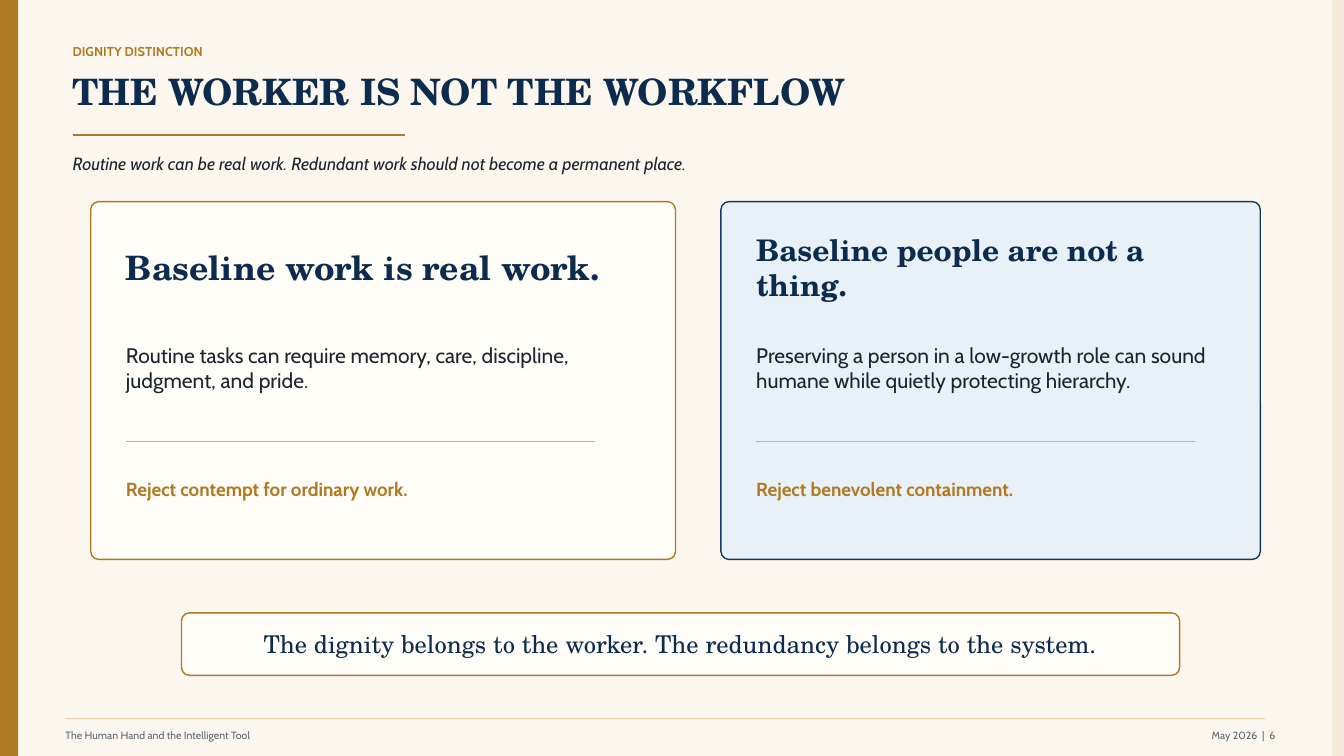
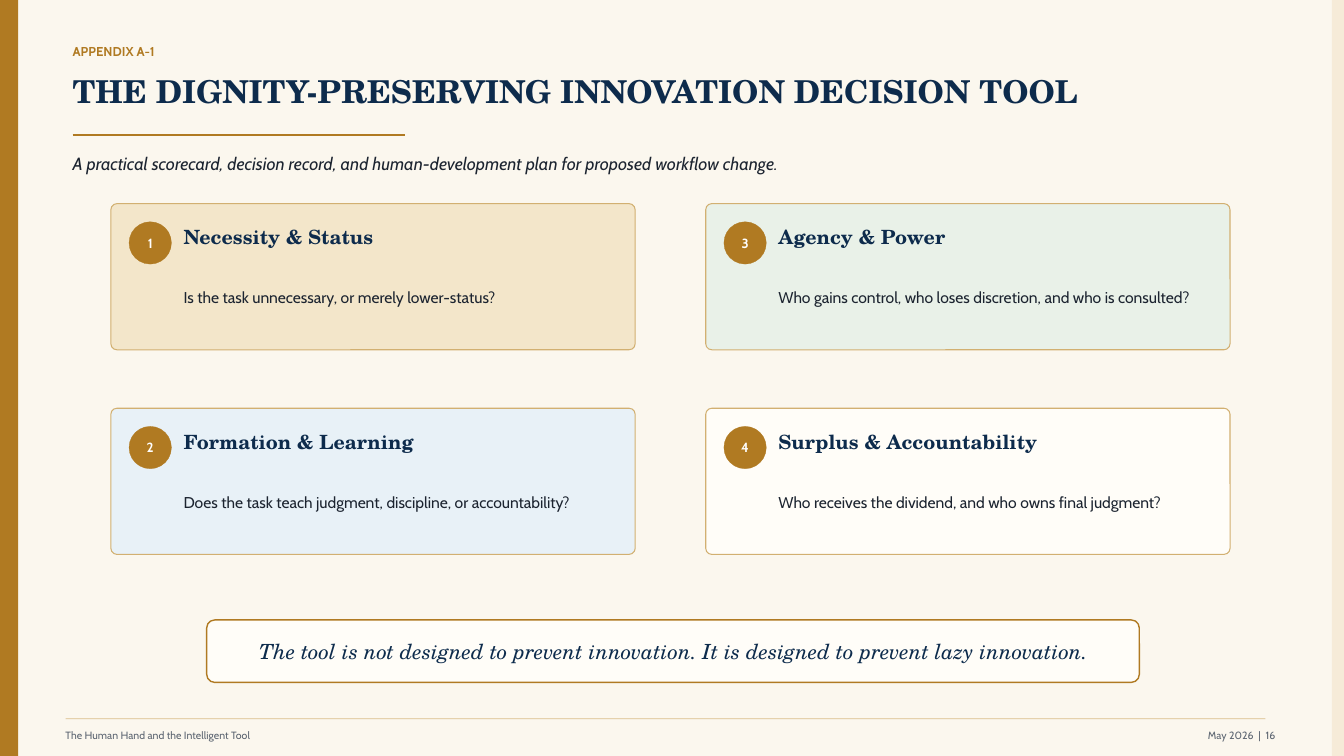
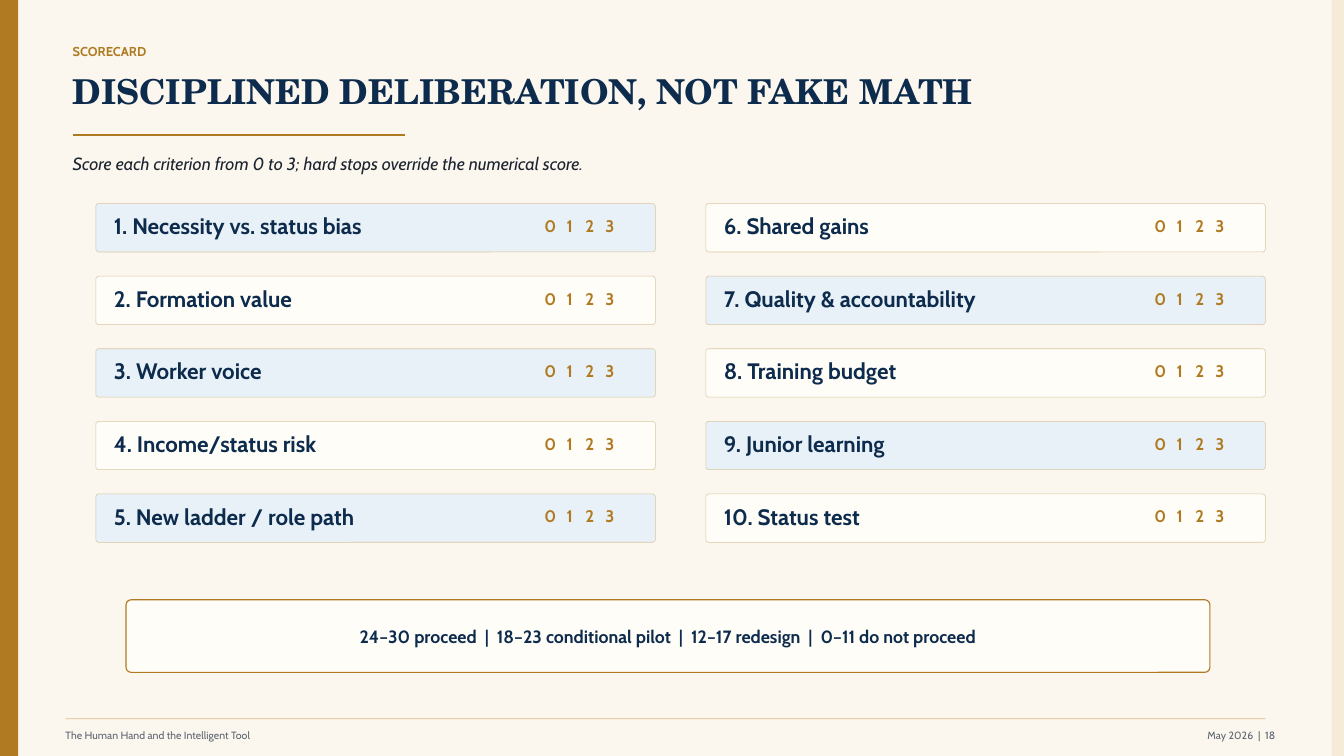
"""Build three slides on dignity, innovation and scoring workflow change."""
from lxml import etree
from pptx import Presentation
from pptx.dml.color import RGBColor
from pptx.enum.shapes import MSO_CONNECTOR, MSO_SHAPE
from pptx.enum.text import MSO_ANCHOR, PP_ALIGN
from pptx.oxml.ns import qn
from pptx.util import Pt

PX = 9144
WIDTH, HEIGHT = 1333, 750
RECT, ROUNDED, OVAL = MSO_SHAPE.RECTANGLE, MSO_SHAPE.ROUNDED_RECTANGLE, MSO_SHAPE.OVAL
STRAIGHT, MIDDLE = MSO_CONNECTOR.STRAIGHT, MSO_ANCHOR.MIDDLE
LEFT, CENTER, RIGHT = PP_ALIGN.LEFT, PP_ALIGN.CENTER, PP_ALIGN.RIGHT
SANS, SERIF = "Cabin", "TeX Gyre Schola"

COLORS = {
    "paper": "FBF7EE", "edge": "F6EBD8", "gold": "B07A22", "soft_gold": "D2B071",
    "row_line": "D8C6A0", "navy": "0D2B4C", "navy_line": "163A5C", "ink": "1C2430",
    "gray": "5B6470", "ivory": "FFFDF8", "blue": "E8F1F7", "sand": "F3E6CA",
    "green": "E9F1E8", "white": "FFFFFF",
}

FOOTER, DATE = "The Human Hand and the Intelligent Tool", "May 2026"

WORKER = {
    "page": 6, "kicker": "DIGNITY DISTINCTION", "title_size": 26,
    "title": "THE WORKER IS NOT THE WORKFLOW",
    "subtitle": "Routine work can be real work. Redundant work should not become a permanent place.",
}
PANELS = [
    {"x": 90, "w": 580, "rule": 465, "fill": "ivory", "line": "gold",
     "heading": "Baseline work is real work.", "size": 24,
     "body": "Routine tasks can require memory, care, discipline, judgment, and pride.",
     "reject": "Reject contempt for ordinary work."},
    {"x": 715, "w": 535, "rule": 435, "fill": "blue", "line": "navy_line",
     "heading": "Baseline people are not a thing.", "size": 21.3,
     "body": "Preserving a person in a low-growth role can sound humane while quietly protecting hierarchy.",
     "reject": "Reject benevolent containment."},
]
DIGNITY = "The dignity belongs to the worker. The redundancy belongs to the system."

TOOL = {
    "page": 16, "kicker": "APPENDIX A-1", "title_size": 22.5,
    "title": "THE DIGNITY-PRESERVING INNOVATION DECISION TOOL",
    "subtitle": "A practical scorecard, decision record, and human-development plan for proposed workflow change.",
}
QUESTIONS = [
    ("Necessity & Status", "Is the task unnecessary, or merely lower-status?", "sand"),
    ("Formation & Learning", "Does the task teach judgment, discipline, or accountability?", "blue"),
    ("Agency & Power", "Who gains control, who loses discretion, and who is consulted?", "green"),
    ("Surplus & Accountability", "Who receives the dividend, and who owns final judgment?", "ivory"),
]
PURPOSE = "The tool is not designed to prevent innovation. It is designed to prevent lazy innovation."

SCORECARD = {
    "page": 18, "kicker": "SCORECARD", "title_size": 24.5,
    "title": "DISCIPLINED DELIBERATION, NOT FAKE MATH",
    "subtitle": "Score each criterion from 0 to 3; hard stops override the numerical score.",
}
CRITERIA = [
    "Necessity vs. status bias", "Formation value", "Worker voice", "Income/status risk",
    "New ladder / role path", "Shared gains", "Quality & accountability",
    "Training budget", "Junior learning", "Status test",
]
SCORES = ["0", "1", "2", "3"]
SCORE_PITCH = 20
VERDICTS = ["24–30 proceed", "18–23 conditional pilot", "12–17 redesign", "0–11 do not proceed"]


def rgb(name):
    return RGBColor.from_string(COLORS[name])


def scaled(*lengths):
    return [length * PX for length in lengths]


def write(shape, text, size, color, face=SANS, bold=False, italic=False,
          align=LEFT, insets=(0, 0, 0, 0), tabs=()):
    frame = shape.text_frame
    frame.word_wrap = True
    frame.vertical_anchor = MIDDLE
    (frame.margin_left, frame.margin_top,
     frame.margin_right, frame.margin_bottom) = scaled(*insets)
    paragraph = frame.paragraphs[0]
    paragraph.text = text
    paragraph.alignment = align
    if tabs:
        stops = etree.SubElement(paragraph._p.get_or_add_pPr(), qn("a:tabLst"))
        for stop in tabs:
            etree.SubElement(stops, qn("a:tab"), pos=str(stop * PX), algn="ctr")
    font = paragraph.font
    font.name, font.size, font.bold, font.italic = face, Pt(size), bold, italic
    font.color.rgb = rgb(color)


def add_text(slide, box, text, size, color, **style):
    write(slide.shapes.add_textbox(*scaled(*box)), text, size, color, **style)


def add_block(slide, kind, box, fill, line=None, weight=1, radius=0):
    block = slide.shapes.add_shape(kind, *scaled(*box))
    block.shadow.inherit = False
    block.fill.solid()
    block.fill.fore_color.rgb = rgb(fill)
    if line:
        block.line.color.rgb = rgb(line)
        block.line.width = Pt(weight)
    else:
        block.line.fill.background()
    if radius:
        block.adjustments[0] = radius / min(box[2:])
    return block


def add_rule(slide, x, y, length, color, weight, opacity=100):
    rule = slide.shapes.add_connector(STRAIGHT, *scaled(x, y, x + length, y))
    rule.line.color.rgb = rgb(color)
    rule.line.width = Pt(weight)
    properties = rule._element.spPr
    if opacity < 100:
        shade = properties.find(".//" + qn("a:srgbClr"))
        etree.SubElement(shade, qn("a:alpha"), val=str(opacity * 1000))
    etree.SubElement(properties, qn("a:effectLst"))


def add_banner(slide, box, text, size, weight=1, radius=8, **style):
    banner = add_block(slide, ROUNDED, box, "ivory", "gold", weight, radius)
    write(banner, text, size, "navy", align=CENTER, **style)


def start_slide(deck, page, kicker, title, title_size, subtitle):
    slide = deck.slides.add_slide(deck.slide_layouts[6])
    add_block(slide, RECT, (0, 0, 18, HEIGHT), "gold")
    add_block(slide, RECT, (WIDTH - 12, 0, 12, HEIGHT), "edge")
    add_text(slide, (72, 40, 350, 22), kicker, 9.2, "gold", bold=True)
    add_text(slide, (72, 65, 1190, 50), title, title_size, "navy", face=SERIF, bold=True)
    add_rule(slide, 72, 134, 330, "gold", 1.15)
    add_text(slide, (72, 147, 1140, 30), subtitle, 12.6, "ink", italic=True)
    add_rule(slide, 65, 713, 1190, "soft_gold", 0.6, opacity=80)
    add_text(slide, (65, 718, 550, 22), FOOTER, 7.5, "gray")
    add_text(slide, (1075, 718, 190, 22), f"{DATE}  |  {page}", 7.5, "gray", align=RIGHT)
    return slide


def build_worker(deck):
    slide = start_slide(deck, **WORKER)
    for panel in PANELS:
        x, w = panel["x"] + 35, panel["w"] - 80
        add_block(slide, ROUNDED, (panel["x"], 200, panel["w"], 355),
                  panel["fill"], panel["line"], radius=8)
        add_text(slide, (x, 238, w, 54), panel["heading"], panel["size"], "navy",
                 face=SERIF, bold=True)
        add_text(slide, (x, 325, w, 80), panel["body"], 15, "ink")
        add_rule(slide, x, 438, panel["rule"], "soft_gold", 1)
        add_text(slide, (x, 468, w, 35), panel["reject"], 13.5, "gold", bold=True)
    add_banner(slide, (180, 608, 990, 62), DIGNITY, 17.5, face=SERIF)


def build_tool(deck):
    slide = start_slide(deck, **TOOL)
    for index, (heading, question, fill) in enumerate(QUESTIONS):
        column, row = divmod(index, 2)
        x, y = 110 + 590 * column, 202 + 203 * row
        add_block(slide, ROUNDED, (x, y, 520, 145), fill, "soft_gold", 0.75, radius=6)
        badge = add_block(slide, OVAL, (x + 18, y + 18, 42, 42), "gold", "gold", 0.2)
        write(badge, str(index + 1), 9.5, "white", bold=True, align=CENTER)
        add_text(slide, (x + 72, y + 17, 425, 32), heading, 14, "navy", face=SERIF, bold=True)
        add_text(slide, (x + 72, y + 58, 425, 70), question, 11.2, "ink")
    add_banner(slide, (205, 615, 925, 62), PURPOSE, 14.9, face=SERIF, italic=True)


def build_scorecard(deck):
    slide = start_slide(deck, **SCORECARD)
    stops = [5 + SCORE_PITCH * step for step in range(1, len(SCORES))]
    for index, criterion in enumerate(CRITERIA):
        column, row = divmod(index, 5)
        x, y = 95 + 605 * column, 202 + 72 * row
        fill = "ivory" if index % 2 else "blue"
        bar = add_block(slide, ROUNDED, (x, y, 555, 48), fill, "row_line", 0.4, radius=3)
        write(bar, f"{index + 1}. {criterion}", 16, "navy", bold=True, insets=(17, 0, 0, 4))
        add_text(slide, (x + 445, y + 13, 75, 18), "\t".join(SCORES), 12, "gold",
                 bold=True, tabs=stops)
    add_banner(slide, (125, 595, 1075, 72), "  |  ".join(VERDICTS), 12.7,
               weight=0.8, radius=5, bold=True)


def main():
    deck = Presentation()
    deck.slide_width, deck.slide_height = scaled(WIDTH, HEIGHT)
    backdrop = deck.slide_master.background.fill
    backdrop.solid()
    backdrop.fore_color.rgb = rgb("paper")
    for build in (build_worker, build_tool, build_scorecard):
        build(deck)
    deck.save("out.pptx")


if __name__ == "__main__":
    main()
